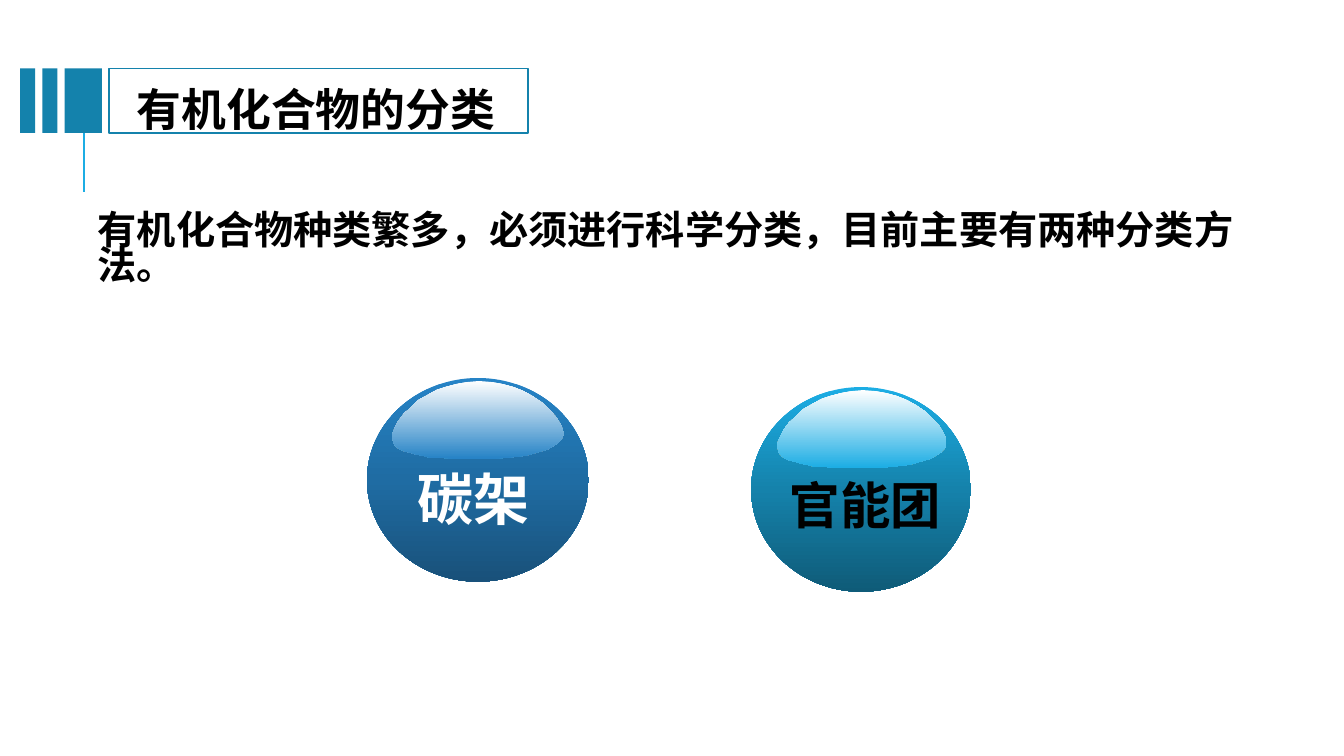
"""Build a slide on the two ways of classifying organic compounds."""
from lxml.etree import SubElement
from pptx import Presentation
from pptx.dml.color import RGBColor
from pptx.enum.shapes import MSO_CONNECTOR, MSO_SHAPE
from pptx.enum.text import MSO_AUTO_SIZE, PP_ALIGN
from pptx.oxml.ns import qn
from pptx.util import Inches, Pt

BLACK = RGBColor(0, 0, 0)
WHITE = RGBColor(255, 255, 255)
TEAL = RGBColor(0x14, 0x82, 0xAC)
SKY = RGBColor(0x1C, 0xAD, 0xE4)

TITLE = "有机化合物的分类"
INTRO = "有机化合物种类繁多，必须进行科学分类，目前主要有两种分类方法。"
BAR_TOP, BAR_HEIGHT = 0.68, 0.64
BARS = [(0.2, 0.15), (0.42, 0.15), (0.64, 0.37)]
BALLS = [
    {"ball": (3.64, 3.75, 2.2, 2.02), "gloss": (3.89, 3.78, 1.7, 0.77),
     "shades": ("2683C6", "1F6CA3", "19517A"), "text": "碳架",
     "label": (4.03, 4.56, 1.33, 0.77), "size": 40,
     "font": "Noto Sans CJK SC", "color": WHITE, "wrap": False},
    {"ball": (7.45, 3.84, 2.18, 2.03), "gloss": (7.71, 3.87, 1.68, 0.77),
     "shades": ("1CADE4", "1582AB", "0F5B78"), "text": "官能团",
     "label": (7.45, 4.65, 2.27, 0.71), "size": 36,
     "font": "Calibri", "color": BLACK, "wrap": True},
]
GLOSS = [
    (1.67, 0.43), (1.69, 0.48), (1.7, 0.52), (1.69, 0.56), (1.67, 0.59),
    (1.64, 0.62), (1.59, 0.65), (1.54, 0.68), (1.47, 0.7), (1.4, 0.72),
    (1.33, 0.74), (1.24, 0.75), (1.15, 0.76), (1.02, 0.77), (0.61, 0.77),
    (0.45, 0.76), (0.37, 0.76), (0.3, 0.74), (0.24, 0.73), (0.18, 0.71),
    (0.13, 0.7), (0.08, 0.68), (0.05, 0.66), (0.02, 0.63), (0.01, 0.6),
    (0, 0.56), (0, 0.53), (0.02, 0.48), (0.06, 0.4), (0.12, 0.32),
    (0.19, 0.26), (0.26, 0.19), (0.35, 0.14), (0.44, 0.09), (0.53, 0.06),
    (0.64, 0.03), (0.75, 0.01), (0.86, 0), (0.98, 0.01), (1.09, 0.03),
    (1.2, 0.06), (1.3, 0.1), (1.39, 0.15), (1.48, 0.21), (1.55, 0.28),
    (1.62, 0.35),
]
GLOSS_WIDTH, GLOSS_HEIGHT = 1.7, 0.77


def inches(place):
    return [Inches(value) for value in place]


def add_gradient(shape, shades):
    shape.shadow.inherit = False
    shape.line.fill.background()
    shape.fill.gradient()
    shape.fill.gradient_angle = 270
    stops = shape._element.spPr.find(qn("a:gradFill")).find(qn("a:gsLst"))
    for stop in list(stops):
        stops.remove(stop)
    for index, shade in enumerate(shades):
        position = 100000 * index // (len(shades) - 1)
        stop = SubElement(stops, qn("a:gs"), pos=str(position))
        SubElement(stop, qn("a:srgbClr"), val=shade)


def add_gloss(page, place, shades):
    left, top, width, height = place
    points = [(Inches(left + x * width / GLOSS_WIDTH),
               Inches(top + y * height / GLOSS_HEIGHT)) for x, y in GLOSS]
    builder = page.shapes.build_freeform(*points[0])
    builder.add_line_segments(points[1:], close=True)
    add_gradient(builder.convert_to_shape(), shades)


def add_text(page, place, text, size, font, color, wrap=True):
    box = page.shapes.add_textbox(*inches(place))
    frame = box.text_frame
    frame.word_wrap = wrap
    para = frame.paragraphs[0]
    para.alignment = PP_ALIGN.CENTER
    span = para.add_run()
    span.text = text
    span.font.size = Pt(size)
    span.font.name = font
    span.font.bold = True
    span.font.color.rgb = color
    return box


def add_bar(page, left, width):
    bar = page.shapes.add_shape(
        MSO_SHAPE.RECTANGLE, *inches((left, BAR_TOP, width, BAR_HEIGHT)))
    bar.shadow.inherit = False
    return bar


def add_heading(page):
    stem = page.shapes.add_connector(
        MSO_CONNECTOR.STRAIGHT, *inches((0.83, 1.9, 0.83, 0.9)))
    stem.line.color.rgb = SKY
    stem.line.width = Pt(1.5)
    SubElement(stem._element.spPr, qn("a:effectLst"))
    frame = add_bar(page, 1.08, 4.16)
    frame.fill.background()
    frame.line.color.rgb = TEAL
    frame.line.width = Pt(1.25)
    for left, width in BARS:
        bar = add_bar(page, left, width)
        bar.fill.solid()
        bar.fill.fore_color.rgb = TEAL
        bar.line.fill.background()
    title = add_text(page, (1.01, 0.65, 4.25, 0.69), TITLE, 32, "Arial", BLACK)
    title.text_frame.auto_size = MSO_AUTO_SIZE.SHAPE_TO_FIT_TEXT
    title.text_frame.paragraphs[0].line_spacing = 1.2


def add_intro(page):
    box = add_text(page, (0.65, 2.09, 12, 1), INTRO, 28, "Arial", BLACK)
    frame = box.text_frame
    frame.margin_left = Inches(0.32)
    frame.margin_right = Inches(0.05)
    para = frame.paragraphs[0]
    para.alignment = PP_ALIGN.LEFT
    para.line_spacing = 0.76


def add_ball(page, item):
    ball = page.shapes.add_shape(MSO_SHAPE.OVAL, *inches(item["ball"]))
    add_gradient(ball, item["shades"])
    add_gloss(page, item["gloss"], ("FFFFFF", item["shades"][0]))
    add_text(page, item["label"], item["text"], item["size"],
             item["font"], item["color"], item["wrap"])


def main():
    deck = Presentation()
    deck.slide_width, deck.slide_height = Inches(13.33), Inches(7.5)
    page = deck.slides.add_slide(deck.slide_layouts[6])
    add_heading(page)
    add_intro(page)
    for item in BALLS:
        add_ball(page, item)
    deck.save("out.pptx")


if __name__ == "__main__":
    main()
